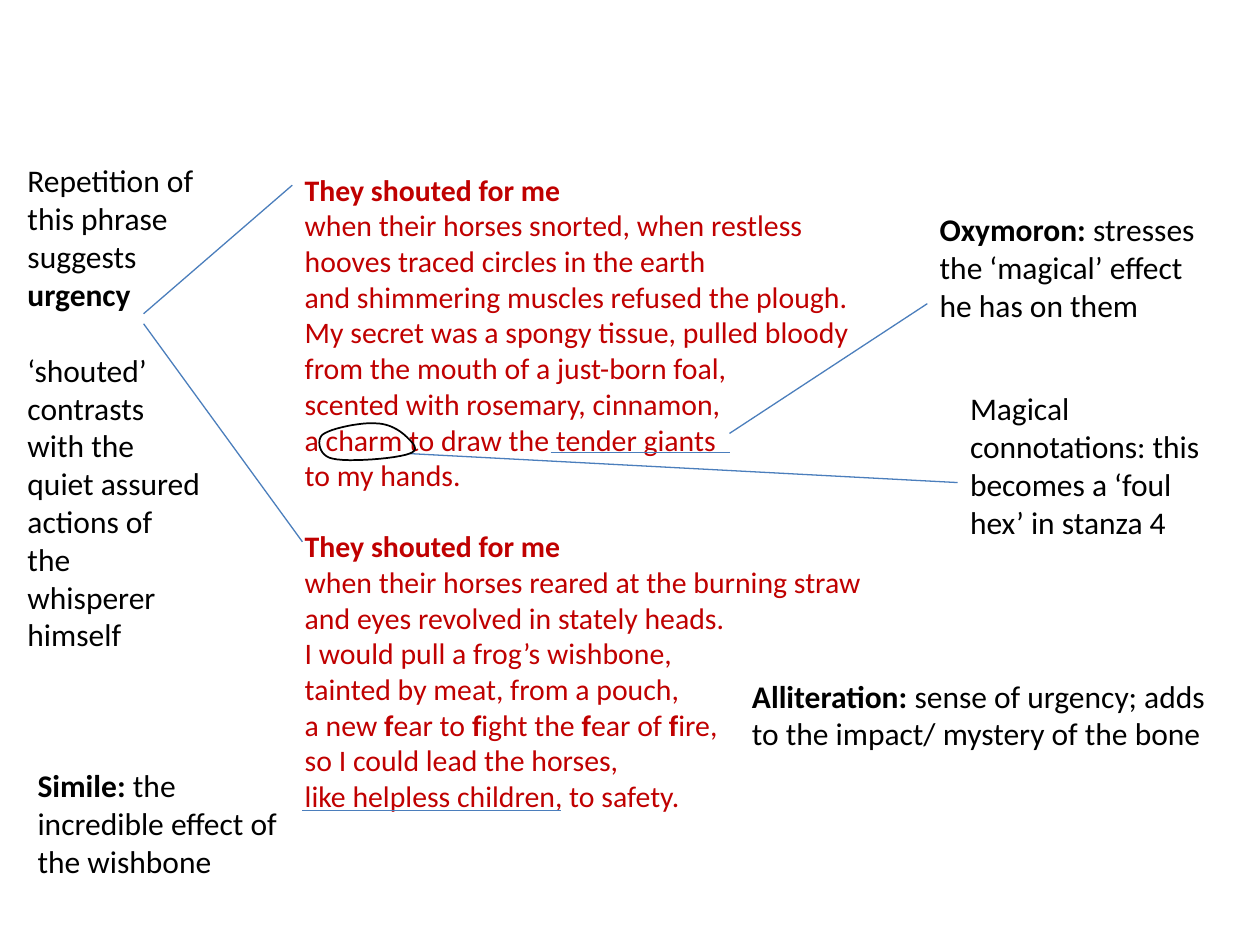
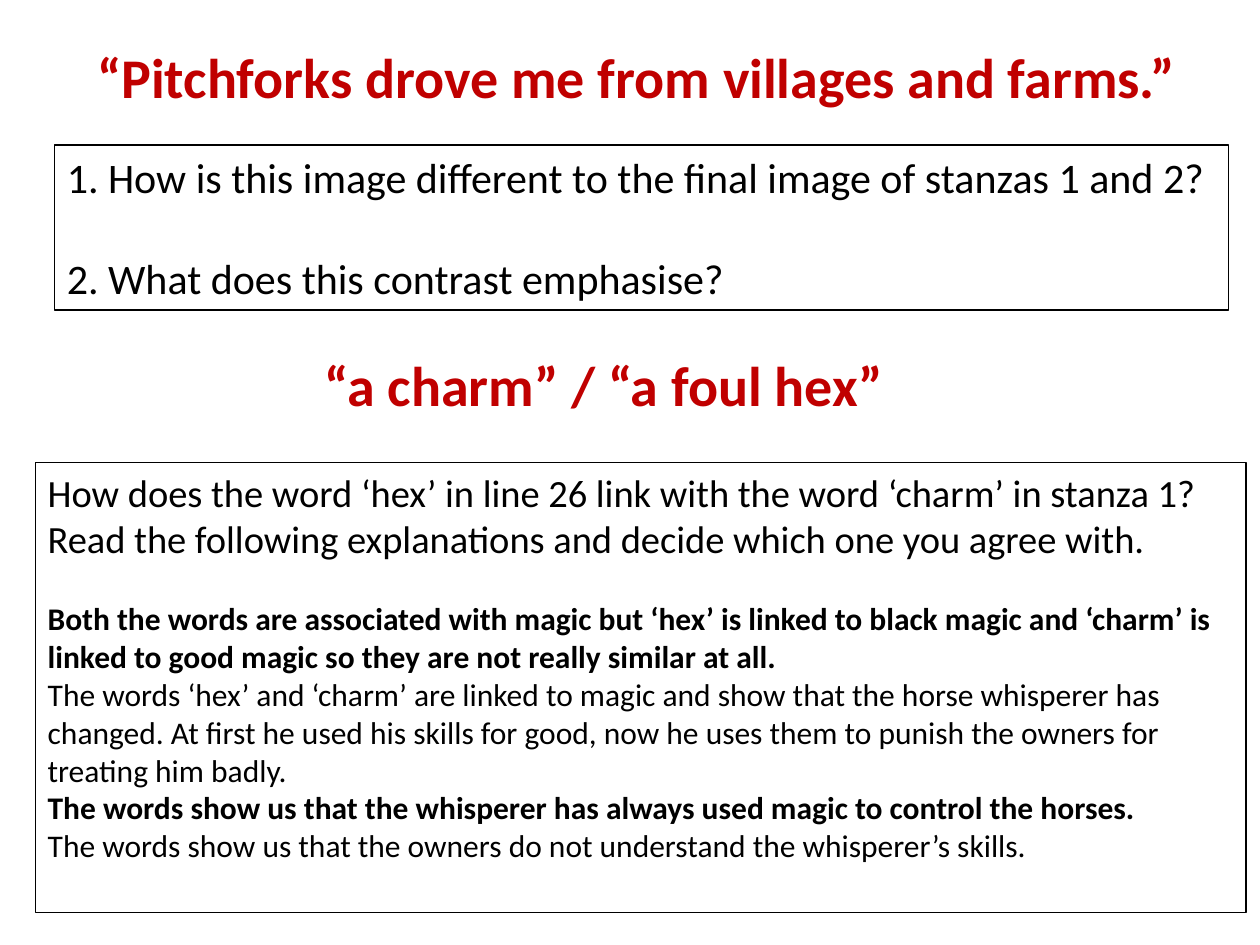
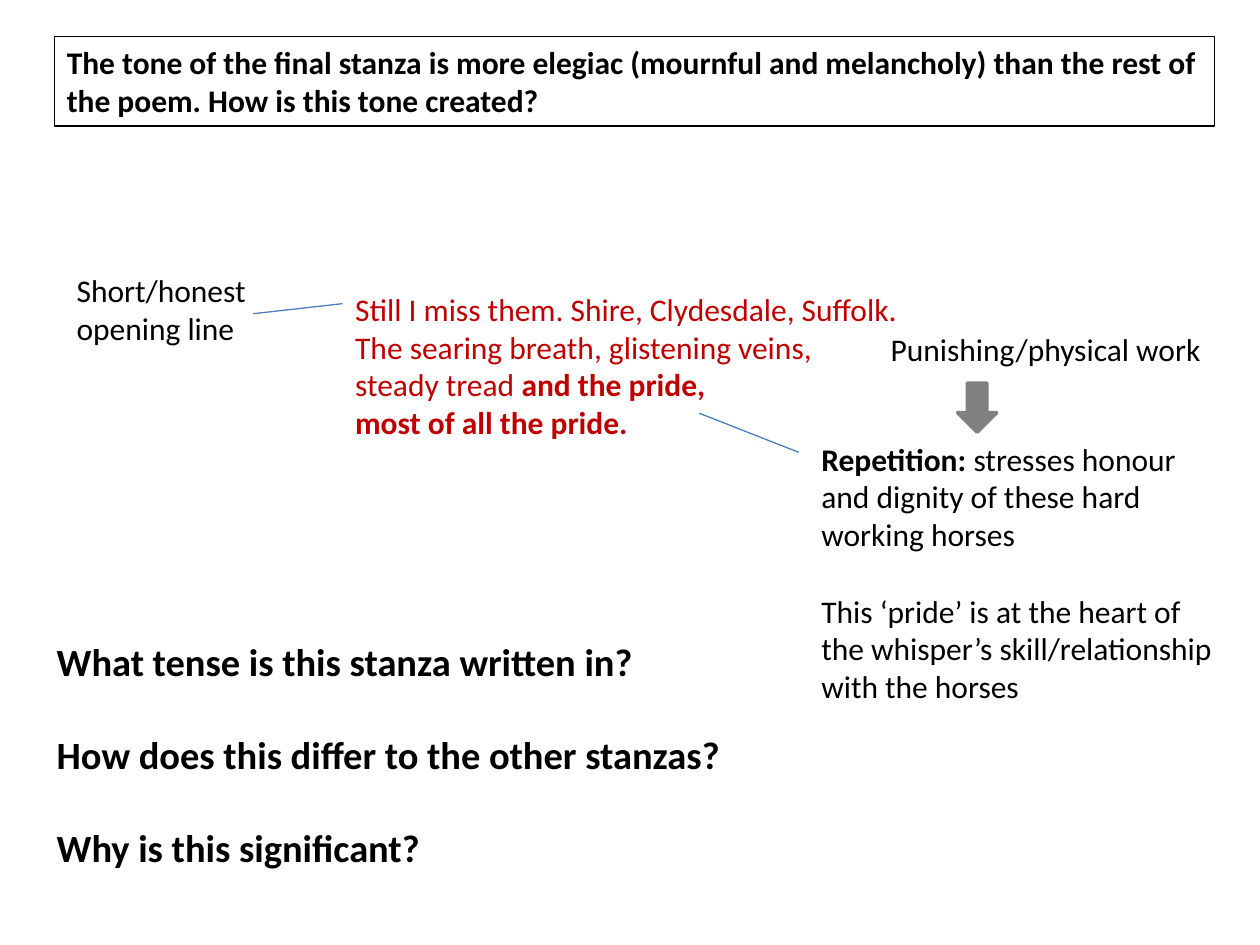
from lxml.etree import SubElement
from pptx import Presentation
from pptx.dml.color import RGBColor
from pptx.enum.shapes import MSO_CONNECTOR as LINK, MSO_SHAPE as SHAPE
from pptx.enum.text import MSO_ANCHOR as ANCHOR, MSO_AUTO_SIZE as FIT, PP_ALIGN as ALIGN
from pptx.oxml.ns import qn
from pptx.util import Inches, Pt

RED = RGBColor(0xC0, 0x00, 0x00)
BLUE = RGBColor(0x4B, 0x7E, 0xBC)
GREY = RGBColor(0x80, 0x80, 0x80)
BLACK = RGBColor(0x00, 0x00, 0x00)

FRAME = {"word_wrap": True, "auto_size": FIT.NONE, "vertical_anchor": ANCHOR.TOP}
PARA = {"alignment": ALIGN.LEFT, "line_spacing": 1.0, "space_after": Pt(0)}


def write(slide, at, paras, size=18, color=BLACK, gap=0, box=False, hold=None):
    """Fill a text box or placeholder; asterisks switch bold on and off."""
    area = [Inches(n) for n in at]
    shape = hold or slide.shapes.add_textbox(*area)
    shape.left, shape.top, shape.width, shape.height = area
    if box:
        shape.line.color.rgb = BLACK
        shape.line.width = Pt(0.75)
    frame = shape.text_frame
    for key, val in FRAME.items():
        setattr(frame, key, val)
    for i, text in enumerate(paras):
        para = frame.add_paragraph() if i else frame.paragraphs[0]
        for key, val in PARA.items():
            setattr(para, key, val)
        para.space_before = Pt(gap if i else 0)
        if hold:
            props = para._p.get_or_add_pPr()
            props.set("marL", "0")
            props.set("indent", "0")
            SubElement(props, qn("a:buNone"))
        for j, part in enumerate(text.split("*")):
            if part:
                run = para.add_run()
                run.text = part
                look = {"name": "Calibri", "size": Pt(size), "bold": j % 2 == 1}
                for key, val in look.items():
                    setattr(run.font, key, val)
                run.font.color.rgb = color
    return shape


def link(slide, *ends):
    """Draw a thin blue line from x, y to x, y."""
    line = slide.shapes.add_connector(LINK.STRAIGHT, *[Inches(n) for n in ends])
    line.line.color.rgb = BLUE
    line.line.width = Pt(0.75)
    SubElement(line._element.spPr, qn("a:effectLst"))


deck = Presentation()
deck.slide_width, deck.slide_height = Inches(10), Inches(7.5)
blank, full = deck.slide_layouts[6], deck.slide_layouts[1]

# Slide 1: two stanzas with notes
slide = deck.slides.add_slide(blank)
write(slide, (2.32, 1.31, 4.96, 3.28), [
    "*They shouted for me*",
    "when their horses snorted, when restless",
    "hooves traced circles in the earth",
    "and shimmering muscles refused the plough.",
    "My secret was a spongy tissue, pulled bloody",
    "from the mouth of a just-born foal,",
    "scented with rosemary, cinnamon,",
    "a charm to draw the tender giants",
    "to my hands.",
], 17, RED)
write(slide, (2.32, 4.14, 4.79, 2.69), [
    "*They shouted for me*",
    "when their horses reared at the burning straw",
    "and eyes revolved in stately heads.",
    "I would pull a frog’s wishbone,",
    "tainted by meat, from a pouch,",
    "a new *f*ear to *f*ight the *f*ear of *f*ire,",
    "so I could lead the horses,",
    "like helpless children, to safety.",
], 17, RED)

notes = [
    ((0.12, 1.23, 1.57, 4.04), [
        "Repetition of this phrase suggests *urgency*",
        "‘shouted’ contrasts with the quiet assured actions of the whisperer himself"]),
    ((7.36, 1.62, 2.36, 1.01), ["*Oxymoron: *stresses the ‘magical’ effect he has on them"]),
    ((7.6, 3.04, 2.05, 1.31), ["Magical connotations: this becomes a ‘foul hex’ in stanza 4"]),
    ((5.87, 5.32, 3.94, 0.71), [
        "*Alliteration: *sense of urgency; adds to the impact/ mystery of the bone"]),
    ((0.2, 6.03, 2.13, 1.01), ["*Simile: *the incredible effect of the wishbone"]),
]
for at, paras in notes:
    write(slide, at, paras, gap=22)

# Links and underlines
for ends in [
    (2.32, 1.47, 1.14, 2.49), (2.4, 4.3, 1.14, 2.57),
    (5.79, 3.44, 7.36, 2.41), (3.25, 3.6, 7.6, 3.83),
    (4.37, 3.59, 5.79, 3.59), (2.4, 6.43, 4.45, 6.43),
]:
    link(slide, *ends)

# Ring around "charm", traced along cubic curves
start = (3.23, 3.47)
curves = [
    ((3.18, 3.42), (3.09, 3.36), (2.98, 3.36)),
    ((2.87, 3.35), (2.62, 3.4), (2.56, 3.45)),
    ((2.51, 3.49), (2.53, 3.62), (2.64, 3.64)),
    ((2.76, 3.67), (3.15, 3.64), (3.25, 3.6)),
    ((3.34, 3.57), (3.27, 3.51), start),
]
dots, last, steps = [], start, 12
for one, two, end in curves:
    for k in range(1, steps + 1):
        t = k / steps
        u = 1 - t
        dots.append([Inches(u**3 * a + 3 * u * u * t * b + 3 * u * t * t * c + t**3 * d)
                     for a, b, c, d in zip(last, one, two, end)])
    last = end
pen = slide.shapes.build_freeform(*[Inches(n) for n in start])
pen.add_line_segments(dots, close=True)
ring = pen.convert_to_shape()
ring.shadow.inherit = False
ring.fill.background()
ring.line.color.rgb = BLACK
ring.line.width = Pt(1)

# Slide 2: contrasting images
slide = deck.slides.add_slide(full)
title, body = slide.placeholders
write(slide, (0.67, 0.29, 8.84, 0.94), ["*“Pitchforks drove me from villages and farms.”*"],
      32, RED, hold=title)
write(slide, (0.43, 1.15, 9.32, 1.31), [
    "1. How is this image different to the final image of stanzas 1 and 2?",
    "2. What does this contrast emphasise?",
], 24, gap=29, box=True, hold=body)
write(slide, (2.48, 2.73, 4.77, 0.64), ["*“a charm” / “a foul hex”*"], 32, RED)
views = write(slide, (0.28, 3.67, 9.61, 3.57), [
    "How does the word ‘hex’ in line 26 link with the word ‘charm’ in stanza 1? "
    "Read the following explanations and decide which one you agree with.",
    "*Both the words are associated with magic but ‘hex’ is linked to black magic "
    "and ‘charm’ is linked to good magic so they are not really similar at all.*",
    "The words ‘hex’ and ‘charm’ are linked to magic and show that the horse whisperer "
    "has changed. At first he used his skills for good, now he uses them to punish "
    "the owners for treating him badly.",
    "*The words show us that the whisperer has always used magic to control the horses.*",
    "The words show us that the owners do not understand the whisperer’s skills.",
], box=True)
ask, first = views.text_frame.paragraphs[:2]
ask.runs[0].font.size = Pt(22)
first.space_before = Pt(22)

# Slide 3: tone of the final stanza
slide = deck.slides.add_slide(full)
title, body = slide.placeholders
write(slide, (0.43, 0.29, 9.21, 0.71), [
    "*The tone of the final stanza is more elegiac (mournful and melancholy) "
    "than the rest of the poem. How is this tone created?*",
], box=True, hold=title)
write(slide, (0.35, 5.01, 5.54, 1.95), [
    "*What tense is this stanza written in?*",
    "*How does this differ to the other stanzas?*",
    "*Why is this significant?*",
], 22, gap=27, hold=body)
write(slide, (2.72, 2.25, 4.61, 1.62), [
    "Still I miss them. Shire, Clydesdale, Suffolk.",
    "The searing breath, glistening veins,",
    "steady tread *and the pride,*",
    "*most of all the pride.*",
], color=RED)
write(slide, (0.51, 2.1, 1.73, 0.71), ["Short/honest opening line"])
write(slide, (6.97, 2.57, 2.69, 0.4), ["Punishing/physical work"])
write(slide, (6.42, 3.44, 3.31, 2.22), [
    "*Repetition: *stresses honour and dignity of these hard working horses",
    "This ‘pride’ is at the heart of the whisper’s skill/relationship with the horses",
], gap=22)
link(slide, 2.01, 2.49, 2.72, 2.41)
link(slide, 5.55, 3.28, 6.34, 3.59)

arrow = slide.shapes.add_shape(SHAPE.DOWN_ARROW, *[Inches(n) for n in (7.6, 3.04, 0.31, 0.39)])
arrow.shadow.inherit = False
arrow.fill.solid()
arrow.fill.fore_color.rgb = GREY
arrow.line.color.rgb = GREY
arrow.line.width = Pt(2)

deck.save("out.pptx")
